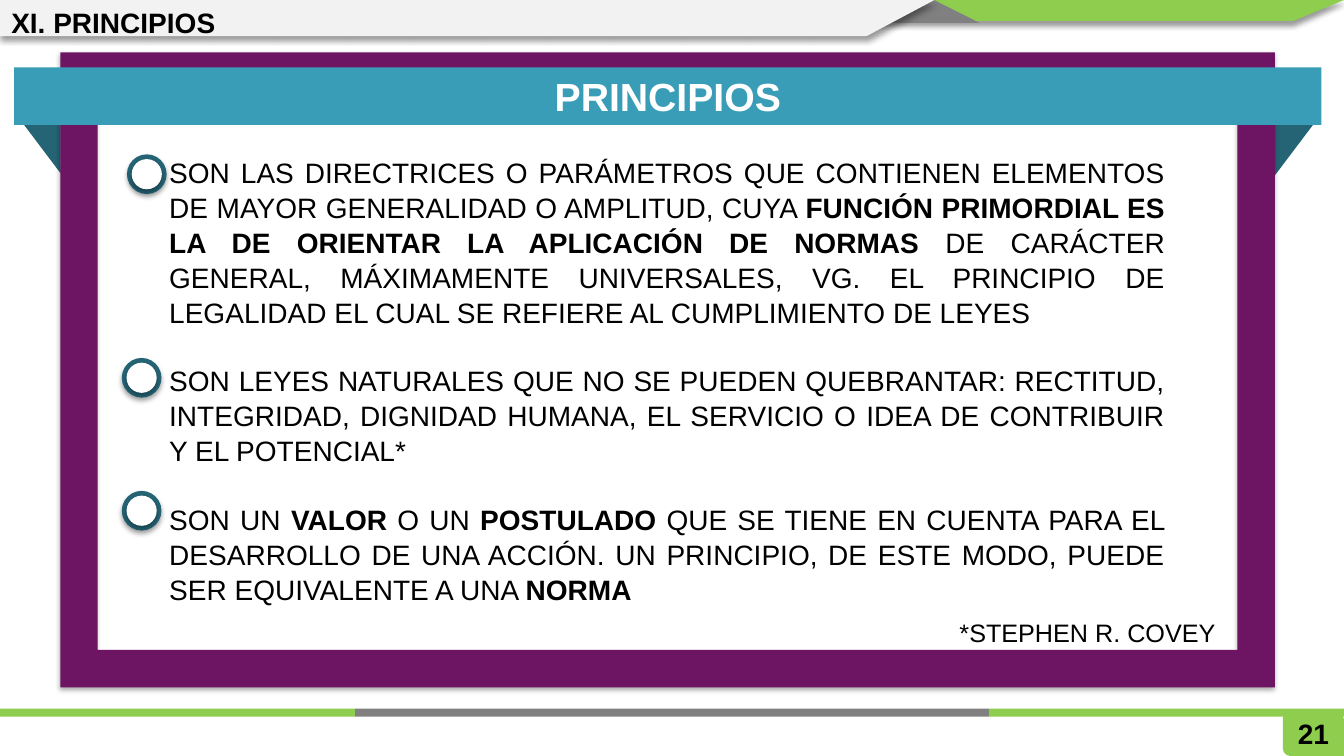
from lxml.etree import SubElement
from pptx import Presentation
from pptx.dml.color import RGBColor
from pptx.enum.shapes import MSO_SHAPE
from pptx.enum.text import MSO_ANCHOR, MSO_AUTO_SIZE, PP_ALIGN
from pptx.oxml.ns import qn
from pptx.util import Cm, Pt

GREEN = RGBColor(0x8F, 0xCD, 0x4E)
GRAY = RGBColor(0x80, 0x80, 0x80)
LIGHT_GRAY = RGBColor(0xF2, 0xF2, 0xF2)
DARK_TEAL = RGBColor(0x25, 0x64, 0x75)
TEAL = RGBColor(0x3A, 0x9D, 0xB8)
PURPLE = RGBColor(0x6D, 0x15, 0x63)
WHITE = RGBColor(0xFF, 0xFF, 0xFF)
BLACK = RGBColor(0, 0, 0)

# Opacity in percent, blur and distance in points
HEADER_SHADOW = (40, 4, 3)
SOFT_SHADOW = (32, 3.5, 2.2)

# Each principle is a list of (wording, bold) spans
PRINCIPLES = [
    [("SON LAS DIRECTRICES O PARÁMETROS QUE CONTIENEN ELEMENTOS DE MAYOR "
      "GENERALIDAD O AMPLITUD, CUYA ", False),
     ("FUNCIÓN PRIMORDIAL ES LA DE ORIENTAR LA APLICACIÓN DE NORMAS", True),
     (" DE CARÁCTER GENERAL, MÁXIMAMENTE UNIVERSALES, VG. EL PRINCIPIO DE "
      "LEGALIDAD EL CUAL SE REFIERE AL CUMPLIMIENTO DE LEYES", False)],
    [("SON LEYES NATURALES QUE NO SE PUEDEN QUEBRANTAR: RECTITUD, INTEGRIDAD, "
      "DIGNIDAD HUMANA, EL SERVICIO O IDEA DE CONTRIBUIR Y EL POTENCIAL*", False)],
    [("SON UN ", False), ("VALOR ", True), ("O UN ", False), ("POSTULADO", True),
     (" QUE SE TIENE EN CUENTA PARA EL DESARROLLO DE UNA ACCIÓN. UN PRINCIPIO, "
      "DE ESTE MODO, PUEDE SER EQUIVALENTE A UNA ", False), ("NORMA", True)],
]


class SlideBuilder:
    font_name = "Arial"

    def __init__(self, slide):
        self.slide = slide
        self.shapes = slide.shapes

    def paint(self, shape, color, shadow=None):
        shape.fill.solid()
        shape.fill.fore_color.rgb = color
        shape.line.fill.background()
        shape.shadow.inherit = False
        if shadow:
            opacity, blur, distance = shadow
            effects = shape.element.spPr.find(qn("a:effectLst"))
            outer = SubElement(effects, qn("a:outerShdw"), blurRad=str(Pt(blur)),
                               dist=str(Pt(distance)), dir="5400000", rotWithShape="0")
            black = SubElement(outer, qn("a:srgbClr"), val="000000")
            SubElement(black, qn("a:alpha"), val=str(opacity * 1000))
        return shape

    def shape(self, kind, left, top, width, height, color, shadow=None, flips=()):
        shape = self.shapes.add_shape(kind, Cm(left), Cm(top), Cm(width), Cm(height))
        for flip in flips:
            shape.element.spPr.xfrm.set(flip, "1")
        return self.paint(shape, color, shadow)

    def outline(self, points, color, shadow):
        corners = [(Cm(x), Cm(y)) for x, y in points]
        builder = self.shapes.build_freeform(*corners[0])
        builder.add_line_segments(corners[1:], close=True)
        return self.paint(builder.convert_to_shape(), color, shadow)

    def ring(self, left, top, size=1.0, border=0.12):
        inner = size - 2 * border
        self.shape(MSO_SHAPE.OVAL, left, top, size, size, DARK_TEAL, SOFT_SHADOW)
        self.shape(MSO_SHAPE.OVAL, left + border, top + border, inner, inner,
                   WHITE, SOFT_SHADOW)

    def style(self, para, size, bold=None, color=BLACK, align=PP_ALIGN.LEFT):
        para.alignment = align
        para.font.name = self.font_name
        para.font.size = Pt(size)
        para.font.bold = bold
        para.font.color.rgb = color

    def label(self, box, text, size, anchor=MSO_ANCHOR.TOP, wrap=True, **style):
        frame = box.text_frame
        frame.auto_size = MSO_AUTO_SIZE.NONE
        frame.word_wrap = wrap
        frame.vertical_anchor = anchor
        frame.text = text
        self.style(frame.paragraphs[0], size, **style)

    def text(self, left, top, width, height, text, size, **style):
        box = self.shapes.add_textbox(Cm(left), Cm(top), Cm(width), Cm(height))
        self.label(box, text, size, **style)

    def placeholder(self, index, left, top, width, height):
        """Move a placeholder into place and in front of the drawn shapes."""
        box = self.slide.placeholders[index]
        box.left, box.top, box.width, box.height = map(Cm, (left, top, width, height))
        box.element.getparent().append(box.element)
        return box

    def principles(self, box, items, size):
        frame = box.text_frame
        frame.auto_size = MSO_AUTO_SIZE.NONE
        for number, spans in enumerate(items):
            para = frame.add_paragraph() if number else frame.paragraphs[0]
            properties = para._p.get_or_add_pPr()
            properties.set("marL", "0")
            properties.set("indent", "0")
            SubElement(properties, qn("a:buNone"))
            self.style(para, size, align=PP_ALIGN.JUSTIFY)
            para.line_spacing = 1.04
            para.space_before = Pt(24 if number else 0)
            for wording, bold in spans:
                span = para.add_run()
                span.text = wording
                span.font.bold = bold


def main():
    deck = Presentation()
    deck.slide_width, deck.slide_height = Cm(33.87), Cm(19.05)
    page = SlideBuilder(deck.slides.add_slide(deck.slide_layouts[1]))

    # Header band
    page.outline([(16, 0), (33.87, 0), (32.59, 0.53), (16, 0.53)], GREEN, HEADER_SHADOW)
    page.shape(MSO_SHAPE.ISOSCELES_TRIANGLE, 22.38, 0, 2.31, 0.58, GRAY)
    page.outline([(0, 0), (23.55, 0), (21.84, 0.91), (0, 0.91)], LIGHT_GRAY, HEADER_SHADOW)
    title = page.placeholder(0, 0.03, 0, 25.73, 1.12)
    page.label(title, "XI. PRINCIPIOS", 20, anchor=MSO_ANCHOR.MIDDLE, bold=True)

    # Footer band and page number
    page.shape(MSO_SHAPE.ROUND_2_DIAG_RECTANGLE, 32.33, 17.95, 1.54, 1.1, GREEN,
               flips=["flipV"])
    for left, width, color in [(0, 8.95, GREEN), (8.95, 15.97, GRAY), (24.92, 8.95, GREEN)]:
        page.shape(MSO_SHAPE.RECTANGLE, left, 17.86, width, 0.2, color)
    page.text(32.33, 17.93, 1.54, 1.12, "21", 20, bold=True, align=PP_ALIGN.CENTER)

    # Frame with ribbon banner
    page.shape(MSO_SHAPE.RIGHT_TRIANGLE, 32.13, 2.87, 1.17, 1.55, DARK_TEAL,
               flips=["flipV"])
    page.shape(MSO_SHAPE.RIGHT_TRIANGLE, 0.36, 2.82, 1.17, 1.55, DARK_TEAL,
               flips=["flipH", "flipV"])
    frame = page.shape(MSO_SHAPE.FRAME, 1.52, 1.32, 30.61, 16, PURPLE, SOFT_SHADOW)
    frame.adjustments[0] = 0.059
    banner = page.shape(MSO_SHAPE.RECTANGLE, 0.36, 1.7, 32.94, 1.45, TEAL)
    page.label(banner, "PRINCIPIOS", 28, anchor=MSO_ANCHOR.MIDDLE, bold=True,
               color=WHITE, align=PP_ALIGN.CENTER)

    # Principles with ring markers
    body = page.placeholder(1, 4.01, 3.76, 25.6, 11.38)
    page.principles(body, PRINCIPLES, 20)
    for left, top in [(3.2, 3.89), (3.07, 9.02), (3.07, 12.37)]:
        page.ring(left, top)
    page.text(23.93, 15.42, 7.39, 1.02, "*STEPHEN R. COVEY", 18, wrap=False)

    deck.save("out.pptx")


if __name__ == "__main__":
    main()
